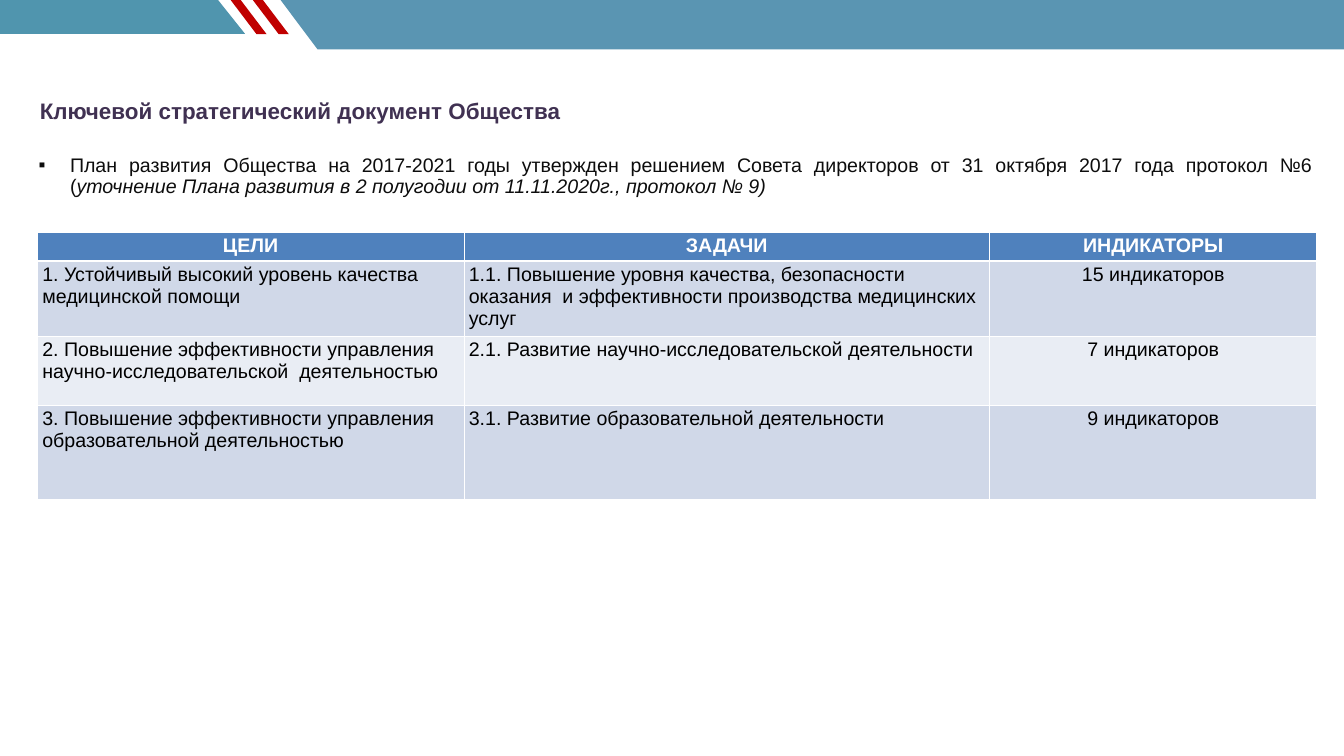
from dataclasses import dataclass

from lxml import etree
from pptx import Presentation
from pptx import util as u
from pptx.dml.color import RGBColor
from pptx.enum import text
from pptx.oxml import ns


@dataclass(frozen=True)
class Theme:
    font: str = "Arial"
    title_size: int = 32
    body_size: int = 28
    title: str = "403152"
    body: str = "0D0D0D"
    cell: str = "000000"
    white: str = "FFFFFF"
    header: str = "4F81BD"
    bands: tuple = ("D0D8E8", "E9EDF4")
    wide_band: str = "5A95B2"
    short_band: str = "5095AE"
    stripe: str = "C00000"


THEME = Theme()
CENTER = text.PP_ALIGN.CENTER
COLUMNS = (8.46, 10.43, 6.49)
ROW_HEIGHTS = (0.58, 1.46, 1.36, 1.87)
GOALS = (
    ("ЦЕЛИ", "ЗАДАЧИ", "ИНДИКАТОРЫ"),
    ("1. Устойчивый высокий уровень качества медицинской помощи",
     "1.1. Повышение уровня качества, безопасности оказания  и эффективности производства медицинских услуг",
     "15 индикаторов"),
    ("2. Повышение эффективности управления научно-исследовательской  деятельностью",
     "2.1. Развитие научно-исследовательской деятельности",
     "7 индикаторов"),
    ("3. Повышение эффективности управления образовательной деятельностью",
     "3.1. Развитие образовательной деятельности",
     "9 индикаторов"),
)


def style_span(span, size, color, bold=False, italic=False):
    span.font.name = THEME.font
    span.font.size = u.Pt(size)
    span.font.color.rgb = RGBColor.from_string(color)
    span.font.bold = bold
    span.font.italic = italic


def add_polygon(page, points, color):
    corners = [(u.Inches(x), u.Inches(y)) for x, y in points]
    builder = page.shapes.build_freeform(*corners[0], scale=1.0)
    builder.add_line_segments(corners[1:], close=True)
    shape = builder.convert_to_shape()
    shape.shadow.inherit = False
    shape.fill.solid()
    shape.fill.fore_color.rgb = RGBColor.from_string(color)
    shape.line.fill.background()


def add_header(page, left, top, width):
    right = left + width
    add_polygon(page, [(right, top), (left + 5.55, top), (left + 6.3, top + 1), (right, top + 1)],
                THEME.wide_band)
    add_polygon(page, [(left + 4.31, top), (left, top), (left, top + 0.69), (left + 4.86, top + 0.69)],
                THEME.short_band)
    for start in (left + 5, left + 4.56):
        add_polygon(page, [(start + 0.2, top), (start, top), (start + 0.53, top + 0.7),
                           (start + 0.73, top + 0.7)], THEME.stripe)


def add_paragraph_box(page, left, top, width, height, indent, hanging):
    box = page.shapes.add_textbox(*map(u.Inches, (left, top, width, height)))
    frame = box.text_frame
    frame.word_wrap = True
    frame.vertical_anchor = text.MSO_ANCHOR.MIDDLE
    para = frame.paragraphs[0]
    para.line_spacing = 0.9
    para.space_before = u.Pt(20)
    properties = para._p.get_or_add_pPr()
    properties.set("marL", str(u.Inches(indent)))
    properties.set("indent", str(u.Inches(-hanging)))
    return para


def add_title(page, left, top, width, height):
    para = add_paragraph_box(page, left, top, width, height, 0.5, 0.5)
    para.text = "Ключевой стратегический документ Общества"
    style_span(para.runs[0], THEME.title_size, THEME.title, bold=True)


def add_plan_note(page, left, top, width, height):
    para = add_paragraph_box(page, left, top, width, height, 1.12, 0.62)
    para.alignment = text.PP_ALIGN.JUSTIFY
    etree.SubElement(para._p.get_or_add_pPr(), ns.qn("a:buFont"), typeface=THEME.font)
    etree.SubElement(para._p.get_or_add_pPr(), ns.qn("a:buChar"), char="▪")
    for wording, italic in (
        ("План развития Общества на 2017-2021 годы утвержден решением Совета директоров "
         "от 31 октября 2017 года протокол №6 (", False),
        ("уточнение Плана развития в 2 полугодии от 11.11.2020г., протокол № 9)", True),
    ):
        span = para.add_run()
        span.text = wording
        style_span(span, THEME.body_size, THEME.body, italic=italic)


def set_borders(cell, top_width, bottom_width):
    properties = cell._tc.get_or_add_tcPr()
    for side, width in (("L", 1), ("R", 1), ("T", top_width), ("B", bottom_width)):
        line = etree.SubElement(properties, ns.qn(f"a:ln{side}"), w=str(u.Pt(width)))
        fill = etree.SubElement(line, ns.qn("a:solidFill"))
        etree.SubElement(fill, ns.qn("a:srgbClr"), val=THEME.white)


def add_goals_table(page, left, top):
    size = (left, top, sum(COLUMNS), sum(ROW_HEIGHTS))
    table = page.shapes.add_table(len(GOALS), len(COLUMNS), *map(u.Inches, size)).table
    for column, width in zip(table.columns, COLUMNS):
        column.width = u.Inches(width)
    for index, (row, height, wordings) in enumerate(zip(table.rows, ROW_HEIGHTS, GOALS)):
        row.height = u.Inches(height)
        heading = index == 0
        for column, (cell, wording) in enumerate(zip(row.cells, wordings)):
            set_borders(cell, 3 if index == 1 else 1, 3 if heading else 1)
            cell.fill.solid()
            color = THEME.header if heading else THEME.bands[(index - 1) % 2]
            cell.fill.fore_color.rgb = RGBColor.from_string(color)
            para = cell.text_frame.paragraphs[0]
            para.text = wording
            if heading or column == len(COLUMNS) - 1:
                para.alignment = CENTER
            style_span(para.runs[0], THEME.body_size, THEME.white if heading else THEME.cell, bold=heading)


def main():
    deck = Presentation()
    deck.slide_width = u.Inches(26.66)
    deck.slide_height = u.Inches(15)
    page = deck.slides.add_slide(deck.slide_layouts[6])
    add_title(page, 0.69, 1.6, 17.71, 1.27)
    add_plan_note(page, 0.17, 2.43, 25.95, 2.16)
    add_header(page, 0, -0.02, 26.66)
    add_goals_table(page, 0.74, 4.6)
    deck.save("out.pptx")


if __name__ == "__main__":
    main()
